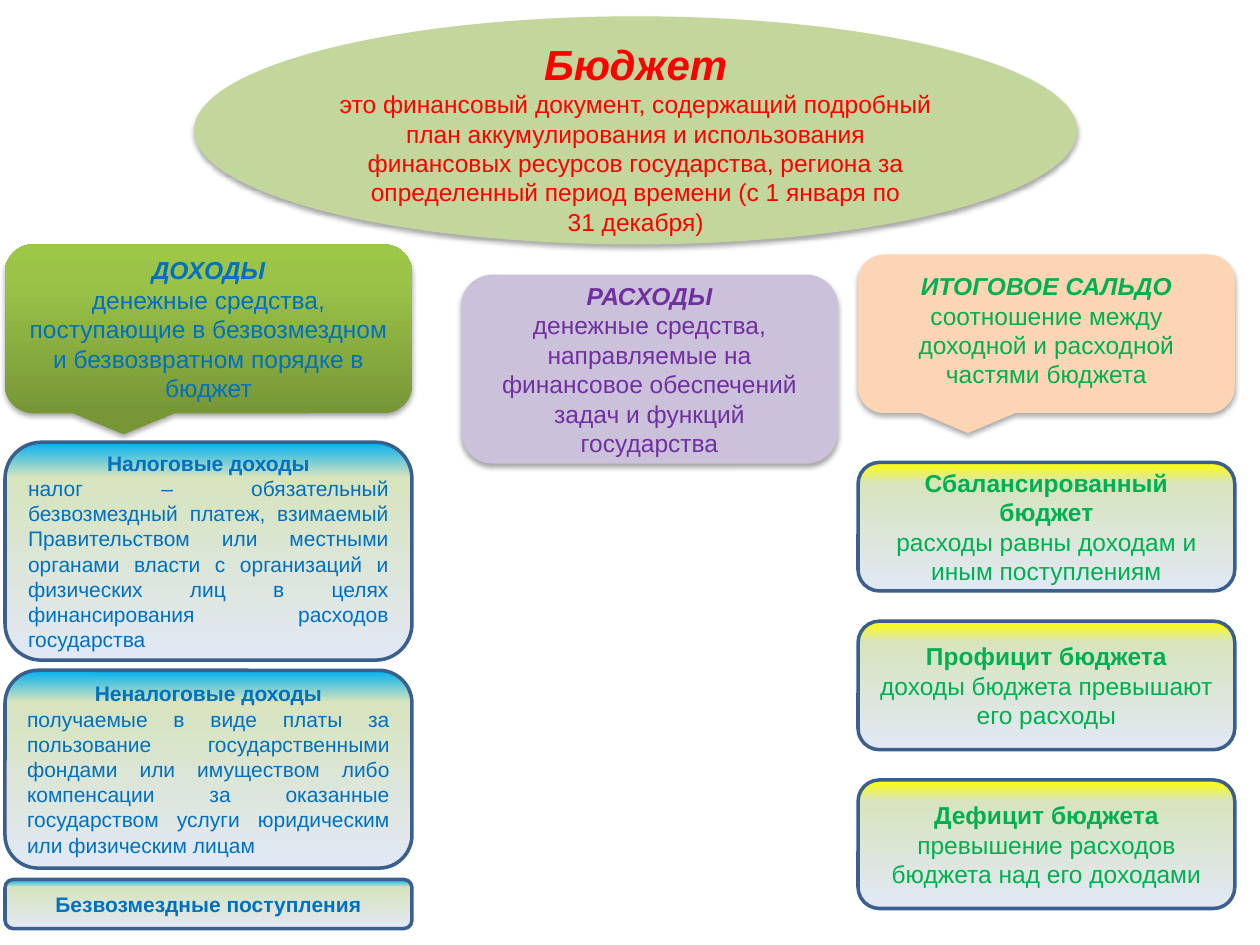
from lxml.etree import SubElement
from pptx import Presentation
from pptx.dml.color import RGBColor
from pptx.enum.shapes import MSO_SHAPE
from pptx.enum.text import MSO_ANCHOR, PP_ALIGN
from pptx.oxml.ns import qn
from pptx.util import Inches, Pt


def rgb(value):
    return RGBColor.from_string(value)


class BudgetSlide:
    """Style and drawing methods for the budget overview slide."""

    font = "Arial"
    outline = "3A5F8C"

    def __init__(self, prs):
        self.s = prs.slides.add_slide(prs.slide_layouts[6])

    def shape(self, kind, x, y, w, h):
        sp = self.s.shapes.add_shape(kind, Inches(x), Inches(y), Inches(w), Inches(h))
        sp.shadow.inherit = False
        sp.text_frame.word_wrap = True
        sp.text_frame.vertical_anchor = MSO_ANCHOR.MIDDLE
        return sp

    def gradient(self, sp, stops, angle):
        sp.fill.gradient()
        sp.fill.gradient_angle = 360 - angle
        gs_list = sp._element.spPr.find(qn("a:gradFill")).find(qn("a:gsLst"))
        for gs in list(gs_list):
            gs_list.remove(gs)
        for pos, color in stops:
            gs = SubElement(gs_list, qn("a:gs"), pos=str(pos * 1000))
            SubElement(gs, qn("a:srgbClr"), val=color)

    def shadow(self, sp):
        effects = sp._element.spPr.find(qn("a:effectLst"))
        outer = SubElement(effects, qn("a:outerShdw"), blurRad=str(Pt(3.1)),
                           dist=str(Pt(1.8)), dir="5400000", rotWithShape="0")
        color = SubElement(outer, qn("a:srgbClr"), val="000000")
        SubElement(color, qn("a:alpha"), val="35000")

    def paragraph(self, p, text, size, color, bold=False, italic=False,
                  align=PP_ALIGN.CENTER):
        p.alignment = align
        for i, line in enumerate(text.split("\n")):
            if i:
                p.add_line_break()
            r = p.add_run()
            r.text = line
            r.font.name, r.font.size = self.font, Pt(size)
            r.font.bold, r.font.italic = bold, italic
            r.font.color.rgb = rgb(color)

    def heading(self, kind, box, fill, title, body, color, title_size=14):
        sp = self.shape(kind, *box)
        if isinstance(fill, str):
            sp.fill.solid()
            sp.fill.fore_color.rgb = rgb(fill)
        else:
            self.gradient(sp, fill, 270)
        sp.line.fill.background()
        self.shadow(sp)
        tf = sp.text_frame
        self.paragraph(tf.paragraphs[0], title, title_size, color, True, True)
        self.paragraph(tf.add_paragraph(), body, 14, color)
        return tf

    def detail(self, box, top, title, body, size, color, align=PP_ALIGN.CENTER):
        sp = self.shape(MSO_SHAPE.ROUNDED_RECTANGLE, *box)
        self.gradient(sp, [(0, top), (16, "D7E4BD"), (100, "E1E8F5")], 90)
        sp.line.color.rgb = rgb(self.outline)
        sp.line.width = Pt(2)
        tf = sp.text_frame
        self.paragraph(tf.paragraphs[0], title, size, color, True)
        if body:
            self.paragraph(tf.add_paragraph(), body, size, color, align=align)


def main():
    prs = Presentation()
    prs.slide_width, prs.slide_height = Inches(10), Inches(7.5)
    slide = BudgetSlide(prs)

    tf = slide.heading(
        MSO_SHAPE.OVAL, (1.54, 0.13, 7.01, 1.81), "C3D69B", "Бюджет",
        "это финансовый документ, содержащий подробный план аккумулирования и "
        "использования финансовых ресурсов государства, региона за "
        "определенный период времени (с 1 января по\n31 декабря)", "FF0000", 24)
    tf.paragraphs[0].line_spacing = Pt(37)

    slide.heading(
        MSO_SHAPE.ROUNDED_RECTANGULAR_CALLOUT, (0.04, 1.94, 3.23, 1.34),
        [(0, "779737"), (80, "9BC348"), (100, "9DC746")], "ДОХОДЫ",
        "денежные средства, поступающие в безвозмездном и безвозвратном "
        "порядке в бюджет", "0070C0")
    slide.heading(
        MSO_SHAPE.ROUNDED_RECTANGLE, (3.66, 2.18, 2.99, 1.5), "CCC1DA", "РАСХОДЫ",
        "денежные средства, направляемые на финансовое обеспечений задач и "
        "функций государства", "7030A0")
    tf = slide.heading(
        MSO_SHAPE.ROUNDED_RECTANGULAR_CALLOUT, (6.81, 2.02, 2.99, 1.26), "FCD5B5",
        "ИТОГОВОЕ САЛЬДО",
        "соотношение между доходной и расходной частями бюджета", "00B050")
    tf.margin_bottom = Inches(0.11)

    incomes = [
        (3.51, 1.73, "Налоговые доходы",
         "налог – обязательный безвозмездный платеж, взимаемый Правительством "
         "или местными органами власти с организаций и физических лиц в целях "
         "финансирования расходов государства"),
        (5.32, 1.57, "Неналоговые доходы",
         "получаемые в виде платы за пользование государственными фондами или "
         "имуществом либо компенсации за оказанные государством услуги "
         "юридическим или физическим лицам"),
        (6.98, 0.39, "Безвозмездные поступления", ""),
    ]
    for y, h, title, body in incomes:
        slide.detail((0.04, y, 3.23, h), "00B0F0", title, body, 12, "0070C0",
                     PP_ALIGN.JUSTIFY)

    balances = [
        ("Сбалансированный бюджет", "расходы равны доходам и иным поступлениям"),
        ("Профицит бюджета", "доходы бюджета превышают его расходы"),
        ("Дефицит бюджета", "превышение расходов бюджета над его доходами"),
    ]
    for i, (title, body) in enumerate(balances):
        slide.detail((6.81, 3.67 + 1.26 * i, 2.99, 1.02), "FFFF00", title, body,
                     14, "00B050")

    prs.save("out.pptx")


if __name__ == "__main__":
    main()
